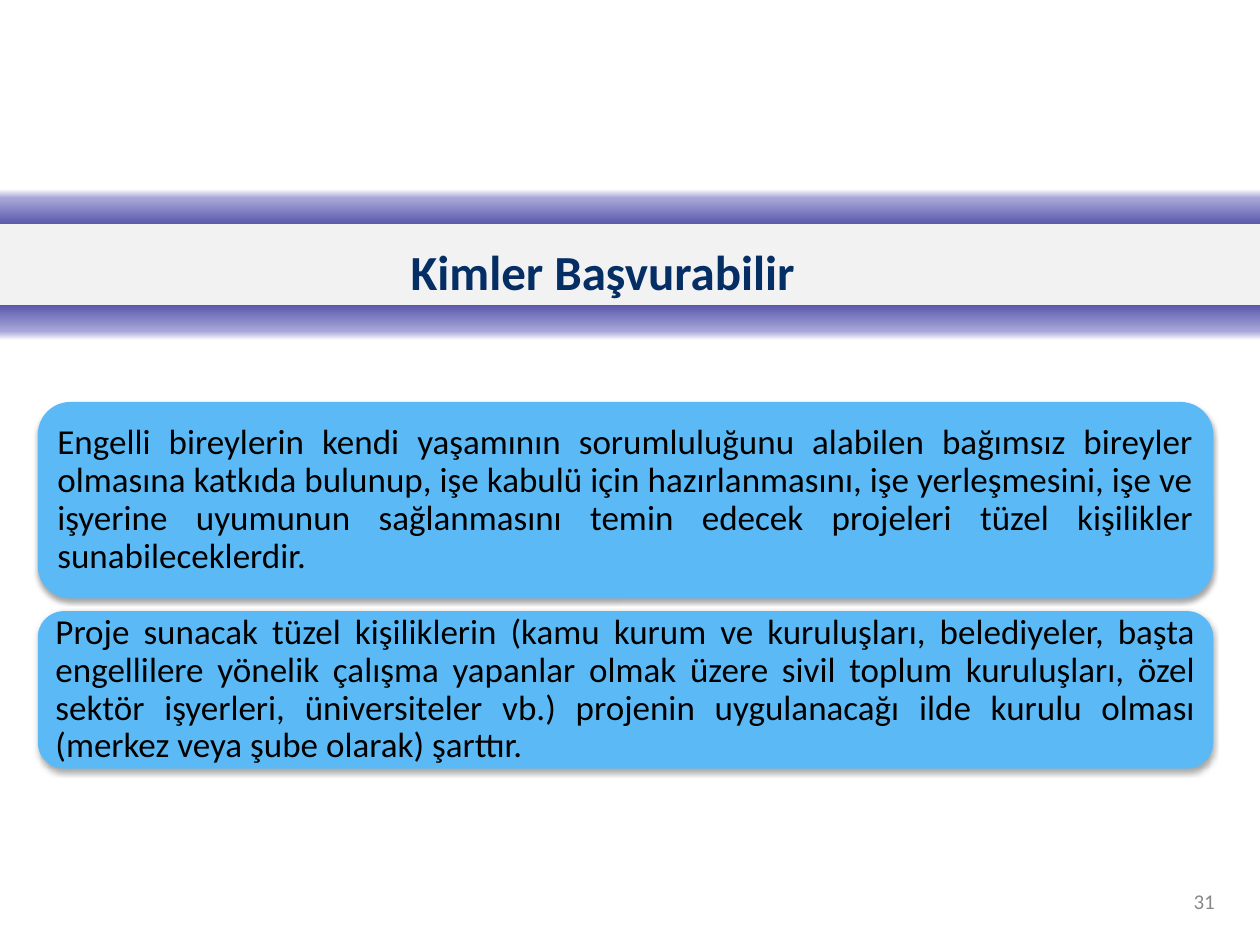
from dataclasses import dataclass

from lxml import etree
from pptx import Presentation
from pptx.dml.color import RGBColor
from pptx.enum.shapes import MSO_SHAPE
from pptx.enum.text import MSO_ANCHOR, PP_ALIGN
from pptx.oxml.ns import qn
from pptx.util import Inches, Pt

RECTANGLE = MSO_SHAPE.RECTANGLE
ROUNDED = MSO_SHAPE.ROUNDED_RECTANGLE
MIDDLE = MSO_ANCHOR.MIDDLE
LEFT, RIGHT, JUSTIFY = PP_ALIGN.LEFT, PP_ALIGN.RIGHT, PP_ALIGN.JUSTIFY

WIDTH, HEIGHT = 10, 7.5
FONT = "Calibri"
BAND_TOP, BAND_HEIGHT, GLOW_HEIGHT = 1.78, 0.64, 0.28
GLOW_EDGE, GLOW_CORE = "FFFFFF", "5A59AC"


@dataclass
class Area:
    left: float
    top: float
    width: float
    height: float

    def lengths(self):
        return [Inches(n) for n in (self.left, self.top, self.width, self.height)]


@dataclass
class TextStyle:
    size: float
    color: str
    align: PP_ALIGN = LEFT
    bold: bool = False
    line_spacing: float = 1.0
    insets: tuple = (0.1, 0.05, 0.1, 0.05)


@dataclass
class Condition:
    top: float
    height: float
    text: str


CONDITIONS = [
    Condition(3.19, 1.56, "Engelli bireylerin kendi yaşamının sorumluluğunu alabilen bağımsız "
              "bireyler olmasına katkıda bulunup, işe kabulü için hazırlanmasını, işe "
              "yerleşmesini, işe ve işyerine uyumunun sağlanmasını temin edecek projeleri "
              "tüzel kişilikler sunabileceklerdir."),
    Condition(4.85, 1.25, "Proje sunacak tüzel kişiliklerin (kamu kurum ve kuruluşları, "
              "belediyeler, başta engellilere yönelik çalışma yapanlar olmak üzere sivil "
              "toplum kuruluşları, özel sektör işyerleri, üniversiteler vb.) projenin "
              "uygulanacağı ilde kurulu olması (merkez veya şube olarak) şarttır."),
]
CONDITION_STYLE = TextStyle(20, "000000", JUSTIFY, line_spacing=0.9, insets=(0.08,) * 4)
TITLE_STYLE = TextStyle(28, "052E65", bold=True, line_spacing=1.15,
                        insets=(3.26, 0.08, 0.1, 0.05))
NUMBER_STYLE = TextStyle(12, "898989", RIGHT)


def rgb(value: str) -> RGBColor:
    return RGBColor.from_string(value)


def write(shape, text: str, style: TextStyle) -> None:
    frame = shape.text_frame
    frame.word_wrap = True
    frame.vertical_anchor = MIDDLE
    (frame.margin_left, frame.margin_top,
     frame.margin_right, frame.margin_bottom) = map(Inches, style.insets)
    paragraph = frame.paragraphs[0]
    paragraph.text = text
    paragraph.alignment = style.align
    paragraph.line_spacing = style.line_spacing
    paragraph.font.name = FONT
    paragraph.font.size = Pt(style.size)
    paragraph.font.bold = style.bold
    paragraph.font.color.rgb = rgb(style.color)


def add_panel(slide, kind: MSO_SHAPE, area: Area, fill: str):
    panel = slide.shapes.add_shape(kind, *area.lengths())
    panel.shadow.inherit = False
    panel.fill.solid()
    panel.fill.fore_color.rgb = rgb(fill)
    panel.line.fill.background()
    return panel


def add_glow(slide, top: float, angle: int) -> None:
    glow = add_panel(slide, RECTANGLE, Area(0, top, WIDTH, GLOW_HEIGHT), GLOW_CORE)
    glow.fill.gradient()
    glow.fill.gradient_angle = angle
    stops = glow.fill._fill._gradFill.find(qn("a:gsLst"))
    for stop in list(stops):
        stops.remove(stop)
    for position, color in ((0, GLOW_EDGE), (25, "A9A7D9"), (100, GLOW_CORE)):
        stop = etree.SubElement(stops, qn("a:gs"), pos=str(position * 1000))
        etree.SubElement(stop, qn("a:srgbClr"), val=color)


def drop_shadow(shape) -> None:
    effects = shape._element.spPr.find(qn("a:effectLst"))
    shadow = etree.SubElement(effects, qn("a:outerShdw"), blurRad=str(Pt(3.1)),
                              dist=str(Pt(1.8)), dir="5400000", rotWithShape="0")
    color = etree.SubElement(shadow, qn("a:srgbClr"), val="000000")
    etree.SubElement(color, qn("a:alpha"), val="35000")


def main() -> None:
    deck = Presentation()
    deck.slide_width, deck.slide_height = Inches(WIDTH), Inches(HEIGHT)
    slide = deck.slides.add_slide(deck.slide_layouts[6])

    for condition in CONDITIONS:
        area = Area(0.03 * WIDTH, condition.top, 0.933 * WIDTH, condition.height)
        panel = add_panel(slide, ROUNDED, area, "5BBAF6")
        drop_shadow(panel)
        write(panel, condition.text, CONDITION_STYLE)

    page_number = slide.shapes.add_textbox(*Area(7.17, 6.95, 2.57, 0.4).lengths())
    write(page_number, "31", NUMBER_STYLE)

    add_glow(slide, BAND_TOP - GLOW_HEIGHT, 270)
    add_glow(slide, BAND_TOP + BAND_HEIGHT, 90)
    band = add_panel(slide, RECTANGLE, Area(0, BAND_TOP, WIDTH, BAND_HEIGHT), "F2F2F2")
    write(band, "Kimler Başvurabilir", TITLE_STYLE)

    deck.save("out.pptx")


if __name__ == "__main__":
    main()
